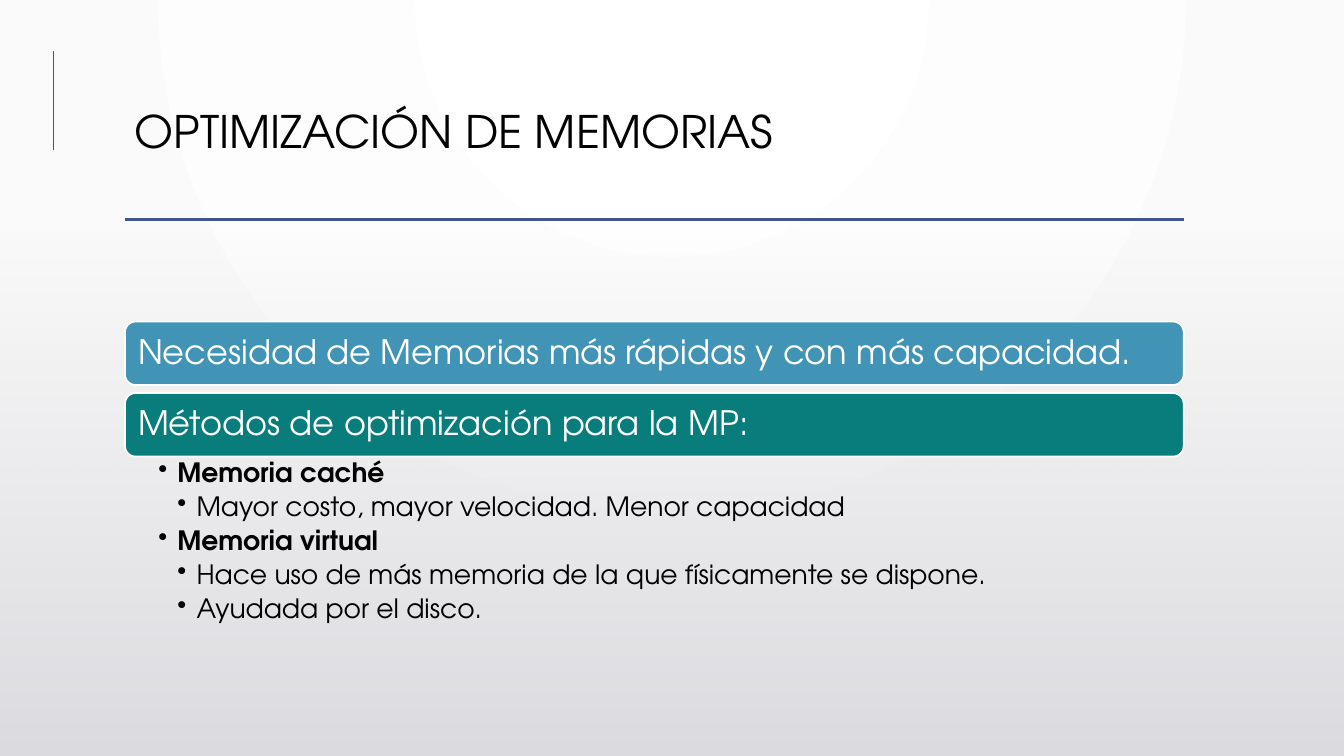
from lxml import etree
from pptx import Presentation
from pptx import util as u
from pptx.dml.color import RGBColor
from pptx.enum import shapes, text
from pptx.oxml import parse_xml
from pptx.oxml.ns import nsdecls, qn

FONT = "TeX Gyre Adventor"
LEFT, WIDTH = 1.24, 10.5
GLOW = ('<a:path path="circle">'
        '<a:fillToRect l="43000" t="0" r="43000" b="100000"/></a:path>')
DOWN = '<a:lin ang="5400000" scaled="0"/>'
BARS = [
    ("Necesidad de Memorias más rápidas y con más capacidad.", "4294B6"),
    ("Métodos de optimización para la MP:", "087D7C"),
]
ITEMS = [
    (1, "Memoria caché"),
    (2, "Mayor costo, mayor velocidad. Menor capacidad"),
    (1, "Memoria virtual"),
    (2, "Hace uso de más memoria de la que físicamente se dispone."),
    (2, "Ayudada por el disco."),
]


def color(code):
    return RGBColor.from_string(code)


def place(box):
    return [u.Inches(n) for n in box]


def write(para, words, size, code, bold=False):
    para.line_spacing = 0.9
    run = para.add_run()
    run.text = words
    font = run.font
    font.name, font.size, font.bold = FONT, u.Pt(size), bold
    font.color.rgb = color(code)


def shade(slide, box, stops, kind):
    """Rectangle with a gradient; each stop is (place, colour, opacity) in %."""
    rect = slide.shapes.add_shape(shapes.MSO_SHAPE.RECTANGLE, *place(box))
    rect.shadow.inherit = False
    rect.line.fill.background()
    rect.fill.background()
    marks = "".join(
        f'<a:gs pos="{at * 1000}"><a:srgbClr val="{code}">'
        f'<a:alpha val="{solid * 1000}"/></a:srgbClr></a:gs>'
        for at, code, solid in stops)
    grad = parse_xml(f'<a:gradFill {nsdecls("a")} rotWithShape="1">'
                     f'<a:gsLst>{marks}</a:gsLst>{kind}</a:gradFill>')
    props = rect.fill._xPr
    props.replace(props.find(qn("a:noFill")), grad)


def rule(slide, start, end, width):
    line = slide.shapes.add_connector(
        shapes.MSO_CONNECTOR.STRAIGHT, *place(start + end))
    line.line.color.rgb = color("415588")
    line.line.width = u.Pt(width)
    etree.SubElement(line._element.spPr, qn("a:effectLst"))


def frame(shape, left, top, right, low):
    body = shape.text_frame
    body.word_wrap = True
    body.margin_left, body.margin_top = u.Inches(left), u.Inches(top)
    body.margin_right, body.margin_bottom = u.Inches(right), u.Inches(low)
    return body


def title(slide, box, words):
    left, top, width, height = box
    shape = slide.shapes.add_textbox(*place(box))
    body = frame(shape, 0.1, 0.05, 0.1, 0.05)
    write(body.paragraphs[0], words, 32, "000000")
    base = top + height
    rule(slide, (left, base), (left + width, base), 2.5)


def bar(slide, box, words, code):
    shape = slide.shapes.add_shape(
        shapes.MSO_SHAPE.ROUNDED_RECTANGLE, *place(box))
    shape.shadow.inherit = False
    shape.fill.solid()
    shape.fill.fore_color.rgb = color(code)
    shape.line.color.rgb = color("FFFFFF")
    shape.line.width = u.Pt(1.25)
    body = frame(shape, 0.1, 0.1, 0.1, 0.1)
    body.vertical_anchor = text.MSO_ANCHOR.MIDDLE
    para = body.paragraphs[0]
    para.alignment = text.PP_ALIGN.LEFT
    write(para, words, 24, "FFFFFF")


def bullets(slide, box, items):
    body = frame(slide.shapes.add_textbox(*place(box)), 0.33, 0.03, 0.19, 0.03)
    step = u.Inches(0.19)
    for i, (level, words) in enumerate(items):
        para = body.add_paragraph() if i else body.paragraphs[0]
        para.level = level
        para.space_after = u.Pt(3.8)
        props = para._p.get_or_add_pPr()
        props.set("marL", str(level * step))
        props.set("indent", str(-step))
        etree.SubElement(props, qn("a:buChar")).set("char", "•")
        write(para, words, 19, "000000", bold=level == 1)


def main():
    deck = Presentation()
    deck.slide_width, deck.slide_height = u.Inches(13.33), u.Inches(7.5)
    slide = deck.slides.add_slide(deck.slide_layouts[6])

    # Backdrop
    shade(slide, (0, 0, 13.33, 7.5),
          [(0, "FFFFFF", 100), (100, "FAFAFA", 100)], GLOW)
    shade(slide, (0, 2.21, 13.33, 5.29),
          [(0, "DCDCE0", 0), (100, "DCDCE0", 100)], DOWN)

    # Heading
    rule(slide, (0.53, 0.51), (0.53, 1.49), 0.75)
    title(slide, (LEFT, 1.04, WIDTH, 1.14), "OPTIMIZACIÓN DE MEMORIAS")

    # Bars and details
    for i, (words, code) in enumerate(BARS):
        bar(slide, (LEFT, 3.19 + i * 0.71, WIDTH, 0.63), words, code)
    bullets(slide, (LEFT, 4.53, WIDTH, 1.79), ITEMS)

    deck.save("out.pptx")


if __name__ == "__main__":
    main()
